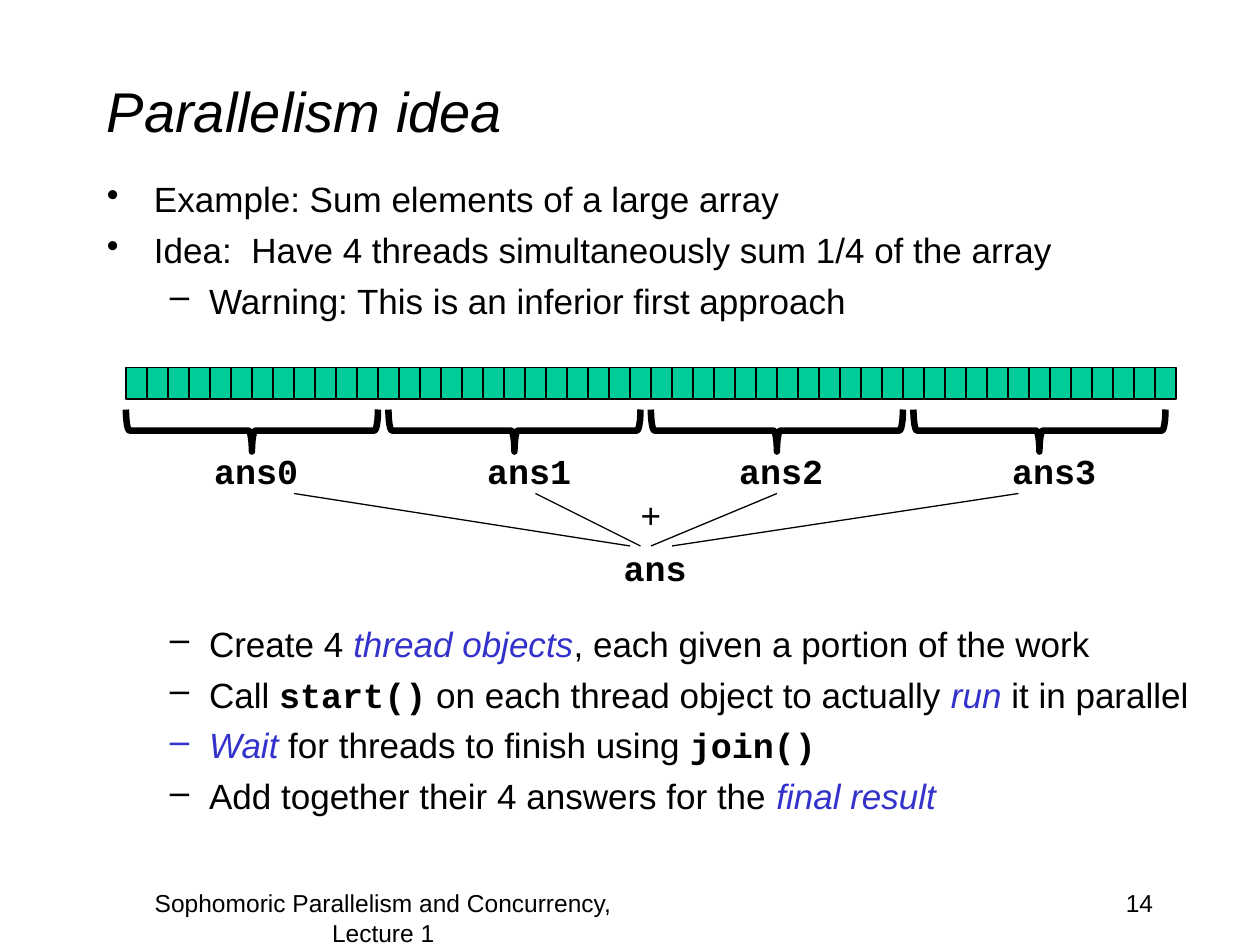
from lxml import etree
from pptx import Presentation
from pptx import util as u
from pptx.dml.color import RGBColor
from pptx.enum import shapes, text
from pptx.oxml import ns

BLACK = RGBColor(0x00, 0x00, 0x00)
BLUE = RGBColor(0x33, 0x33, 0xCC)
GREEN = RGBColor(0x00, 0xCC, 0x99)

BASE = dict(name="Arial", size=u.Pt(20), bold=False, italic=False)
KEY = dict(italic=True, color=BLUE)
CODE = dict(name="Courier New", bold=True)
SMALL = dict(size=u.Pt(14))

# All places are counted in array cells, six to the inch.
CELL = 2.54 / 6
CELLS = 50
ARRAY = dict(left=6, top=17.5, high=1.5)

TITLE = "Parallelism idea"
# Each line: level, space before in points, runs of (words, format)
LINES = [
    (0, 0, [("Example: Sum elements of a large array", {})]),
    (0, 5, [("Idea:  Have 4 threads simultaneously sum 1/4 of the array", {})]),
    (1, 5, [("Warning: This is an inferior first approach", {})]),
    (1, 172, [("Create 4 ", {}), ("thread objects", KEY),
              (", each given a portion of the work", {})]),
    (1, 5, [("Call ", {}), ("start()", CODE),
            (" on each thread object to actually ", {}), ("run", KEY),
            (" it in parallel", {})]),
    (1, 5, [("Wait", KEY), (" for threads to finish using ", {}),
            ("join()", CODE)]),
    (1, 5, [("Add together their 4 answers for the ", {}),
            ("final result", KEY)]),
]
LEVELS = [("•", 0.95, 0.95), ("–", 2.06, 0.79)]  # mark, margin, hang in cm

# Labels: words, centre x, centre y, format
LABELS = [
    ("ans0", 12.2, 22.4, CODE),
    ("ans1", 25.2, 22.4, CODE),
    ("ans2", 37.2, 22.4, CODE),
    ("ans3", 50.2, 22.4, CODE),
    ("+", 31, 24.5, {}),
    ("ans", 31.2, 27, CODE),
]
ENDS = [30, 30.5, 31, 32]  # where the four lines meet the final answer


def grid(*nums):
    """Turn counts of cells into lengths."""
    return [u.Cm(n * CELL) for n in nums]


def style(run, look):
    look = {**BASE, "color": BLACK, **look}
    run.font.color.rgb = look.pop("color")
    for key, val in look.items():
        setattr(run.font, key, val)


def add_box(slide, place, anchor=text.MSO_ANCHOR.TOP):
    frame = slide.shapes.add_textbox(*grid(*place)).text_frame
    frame.word_wrap = True
    frame.vertical_anchor = anchor
    return frame


def add_line(slide, place, words, look, align, anchor=text.MSO_ANCHOR.TOP):
    """Add a text box that holds one run."""
    frame = add_box(slide, place, anchor)
    para = frame.paragraphs[0]
    para.alignment = align
    run = para.add_run()
    run.text = words
    style(run, look)
    return frame


def add_mark(para, level):
    mark, left, hang = LEVELS[level]
    props = para._p.get_or_add_pPr()
    props.set("marL", str(u.Cm(left)))
    props.set("indent", str(-u.Cm(hang)))
    etree.SubElement(props, ns.qn("a:buChar")).set("char", mark)


def add_body(slide):
    frame = add_box(slide, (4.5, 8, 54.5, 32))
    frame.margin_top = u.Cm(0.2)
    for num, (level, gap, runs) in enumerate(LINES):
        para = frame.add_paragraph() if num else frame.paragraphs[0]
        para.level = level
        para.space_before = u.Pt(gap)
        add_mark(para, level)
        for words, look in runs:
            run = para.add_run()
            run.text = words
            style(run, look)


def add_shape(slide, kind, place, width, fill=None):
    shape = slide.shapes.add_shape(kind, *grid(*place))
    shape.shadow.inherit = False
    shape.line.color.rgb = BLACK
    shape.line.width = u.Pt(width)
    if fill is None:
        shape.fill.background()
    else:
        shape.fill.solid()
        shape.fill.fore_color.rgb = fill
    return shape


def add_array(slide):
    for num in range(CELLS):
        place = (ARRAY["left"] + num, ARRAY["top"], 1, ARRAY["high"])
        add_shape(slide, shapes.MSO_SHAPE.RECTANGLE, place, 0.75, GREEN)


def add_sums(slide):
    """Add a brace and a joining line for each thread, then the labels."""
    for num, end in enumerate(ENDS):
        place = (11 + 12.5 * num, 14.5, 2, 12)
        brace = add_shape(slide, shapes.MSO_SHAPE.LEFT_BRACE, place, 3.75)
        brace.rotation = 270
        line = slide.shapes.add_connector(
            shapes.MSO_CONNECTOR.STRAIGHT,
            *grid(14 + 11.5 * num, 23.5, end, 26))
        line.line.color.rgb = BLACK
        line.line.width = u.Pt(0.75)
        etree.SubElement(line._element.spPr, ns.qn("a:effectLst"))
    for words, mid, row, look in LABELS:
        frame = add_line(slide, (mid - 3, row - 1, 6, 2), words, look,
                         text.PP_ALIGN.CENTER, text.MSO_ANCHOR.MIDDLE)
        frame.margin_top = frame.margin_bottom = 0


def main():
    deck = Presentation()
    deck.slide_width, deck.slide_height = u.Cm(25.4), u.Cm(19.05)
    slide = deck.slides.add_slide(deck.slide_layouts[6])
    add_line(slide, (4.5, 1.5, 51, 7.5), TITLE,
             dict(size=u.Pt(32), italic=True),
             text.PP_ALIGN.LEFT, text.MSO_ANCHOR.MIDDLE)
    add_body(slide)
    add_line(slide, (43, 42, 12.5, 3), "14", SMALL, text.PP_ALIGN.RIGHT)
    add_line(slide, (5, 42, 26.5, 3),
             "Sophomoric Parallelism and Concurrency, Lecture 1",
             SMALL, text.PP_ALIGN.CENTER)
    add_array(slide)
    add_sums(slide)
    deck.save("out.pptx")


if __name__ == "__main__":
    main()
